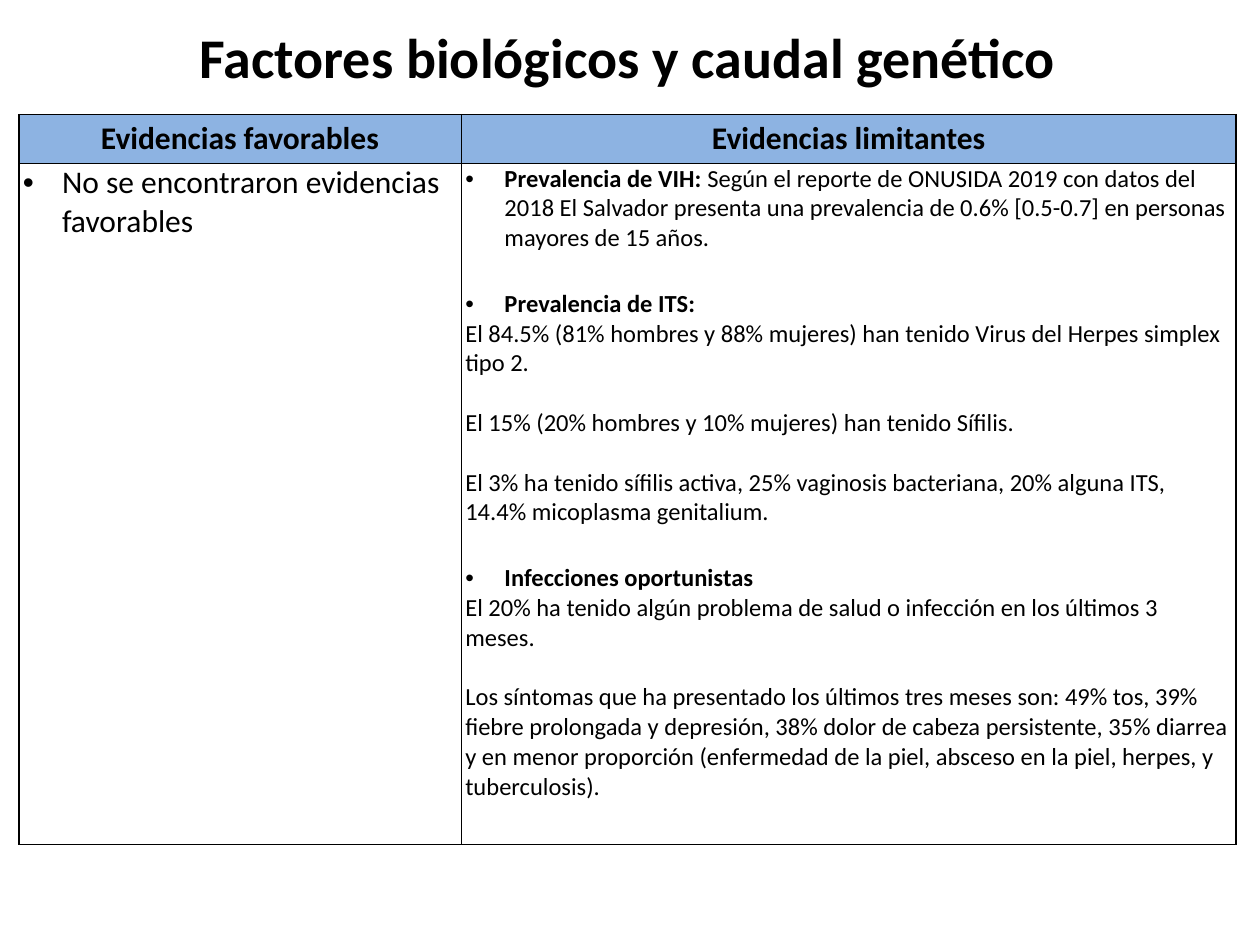
from lxml.etree import SubElement
from pptx import Presentation
from pptx.dml.color import RGBColor
from pptx.enum.text import MSO_ANCHOR as Anchor, PP_ALIGN as Align
from pptx.oxml.ns import qn
from pptx.util import Cm, Pt

FONT = "Calibri"
BLACK, BLUE = "000000", "8DB3E2"
LEFT = Cm(0.38)
COLS = [Cm(8.92), Cm(15.62)]
ROWS = [Cm(0.99), Cm(13.72)]
INDENT = Cm(0.79)
LINE, WIDE = Pt(17), Pt(20.5)

HEADERS = ["Evidencias favorables", "Evidencias limitantes"]
FAVORABLE = [("", "No se encontraron evidencias favorables", True, 0)]
LIMITING = [
    ("Prevalencia de VIH: ", "Según el reporte de ONUSIDA 2019 con datos del 2018 El Salvador "
     "presenta una prevalencia de 0.6% [0.5-0.7] en personas mayores de 15 años.", True, 0),
    ("Prevalencia de ITS:", "", True, WIDE),
    ("", "El 84.5% (81% hombres y 88% mujeres) han tenido Virus del Herpes simplex tipo 2.", False, 0),
    ("", "El 15% (20% hombres y 10% mujeres) han tenido Sífilis.", False, LINE),
    ("", "El 3% ha tenido sífilis activa, 25% vaginosis bacteriana, 20% alguna ITS, "
     "14.4% micoplasma genitalium.", False, LINE),
    ("Infecciones oportunistas", "", True, WIDE),
    ("", "El 20% ha tenido algún problema de salud o infección en los últimos 3 meses.", False, 0),
    ("", "Los síntomas que ha presentado los últimos tres meses son: 49% tos, 39% fiebre "
     "prolongada y depresión, 38% dolor de cabeza persistente, 35% diarrea y en menor proporción "
     "(enfermedad de la piel, absceso en la piel, herpes, y tuberculosis).", False, LINE),
]


def color(value):
    return RGBColor.from_string(value)


def set_attrs(obj, values):
    for name, value in values.items():
        setattr(obj, name, value)


def add_run(p, text, size, bold):
    r = p.add_run()
    r.text = text
    set_attrs(r.font, {"name": FONT, "size": Pt(size), "bold": bold})
    r.font.color.rgb = color(BLACK)


def add_bullet(p):
    pPr = p._p.get_or_add_pPr()
    pPr.set("marL", str(INDENT))
    pPr.set("indent", str(-INDENT))
    SubElement(pPr, qn("a:buFont"), typeface="Arial")
    SubElement(pPr, qn("a:buChar"), char="•")


def add_borders(cell):
    tcPr = cell._tc.get_or_add_tcPr()
    for side in "LRTB":
        ln = SubElement(tcPr, qn(f"a:ln{side}"), w=str(Pt(1)))
        fill = SubElement(ln, qn("a:solidFill"))
        SubElement(fill, qn("a:srgbClr"), val=BLACK)


def format_cell(cell, anchor):
    set_attrs(cell, {"margin_left": Cm(0.08), "margin_right": Cm(0.08), "margin_top": 0,
                     "margin_bottom": 0, "vertical_anchor": anchor})
    add_borders(cell)


def fill_header(cell, text):
    format_cell(cell, Anchor.MIDDLE)
    cell.fill.solid()
    cell.fill.fore_color.rgb = color(BLUE)
    p = cell.text_frame.paragraphs[0]
    p.alignment = Align.CENTER
    add_run(p, text, 18, True)


def fill_body(cell, items, size):
    format_cell(cell, Anchor.TOP)
    cell.fill.background()
    tf = cell.text_frame
    for i, (label, text, bullet, gap) in enumerate(items):
        p = tf.add_paragraph() if i else tf.paragraphs[0]
        p.space_before = gap
        if bullet:
            add_bullet(p)
        for part, bold in ((label, True), (text, False)):
            if part:
                add_run(p, part, size, bold)


def add_title(slide, text):
    tf = slide.shapes.add_textbox(LEFT, Cm(0.33), sum(COLS), Cm(1.63)).text_frame
    tf.word_wrap = True
    p = tf.paragraphs[0]
    p.alignment = Align.CENTER
    add_run(p, text, 32, True)


def add_evidence_table(slide):
    table = slide.shapes.add_table(2, 2, LEFT, Cm(2.31), sum(COLS), sum(ROWS)).table
    set_attrs(table, {"first_row": False, "horz_banding": False})
    for col, width in zip(table.columns, COLS):
        col.width = width
    for row, height in zip(table.rows, ROWS):
        row.height = height
    for i, text in enumerate(HEADERS):
        fill_header(table.cell(0, i), text)
    fill_body(table.cell(1, 0), FAVORABLE, 18)
    fill_body(table.cell(1, 1), LIMITING, 14)


def main():
    prs = Presentation()
    set_attrs(prs, {"slide_width": Cm(25.4), "slide_height": Cm(19.05)})
    slide = prs.slides.add_slide(prs.slide_layouts[6])
    add_evidence_table(slide)
    add_title(slide, "Factores biológicos y caudal genético")
    prs.save("out.pptx")


if __name__ == "__main__":
    main()
